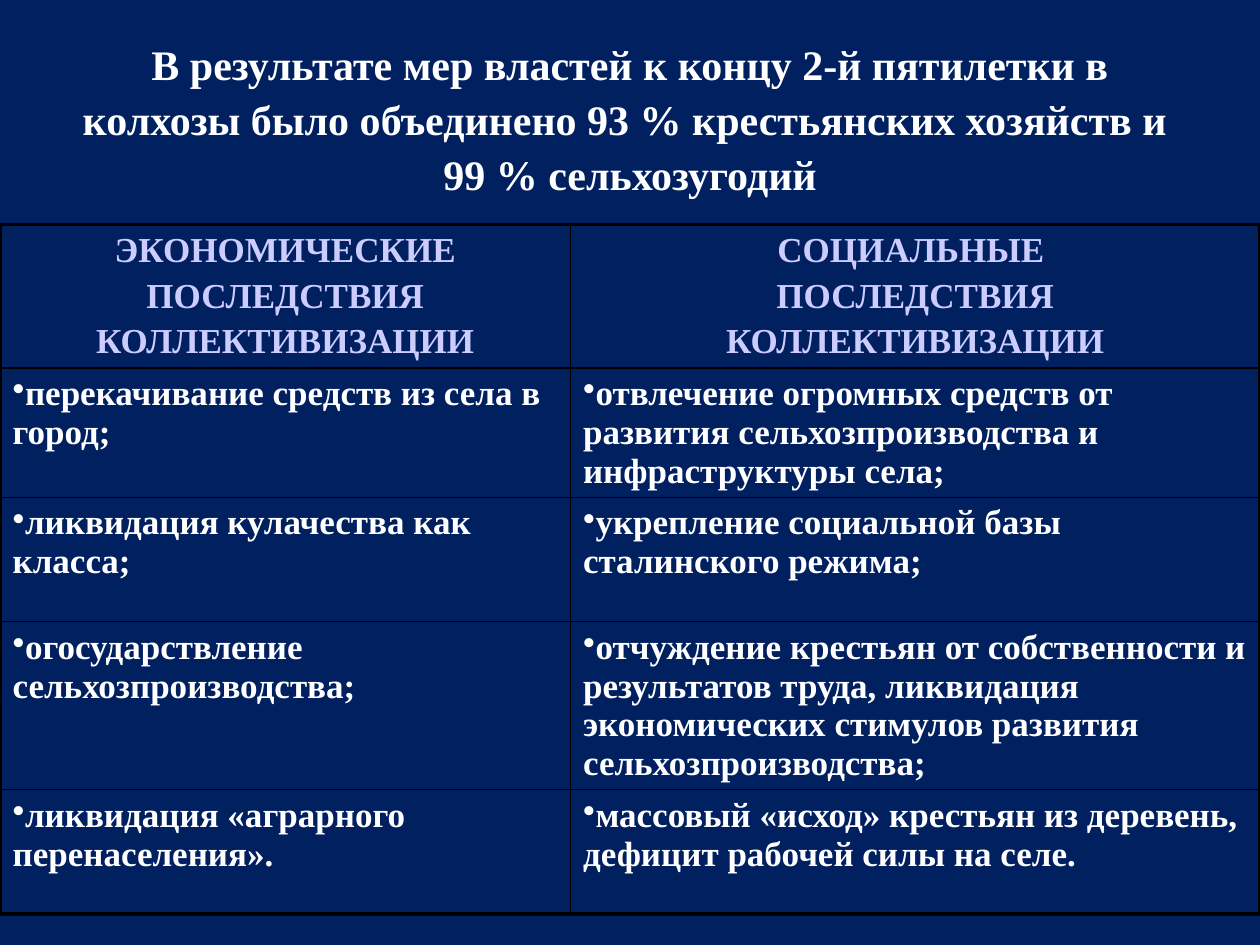
"""Build a slide on the economic and social results of collectivization."""
import lxml.etree
import pptx
import pptx.dml.color
import pptx.enum.text
import pptx.oxml.ns
import pptx.util

Pt = pptx.util.Pt
RGB = pptx.dml.color.RGBColor.from_string
ALIGN = pptx.enum.text.PP_ALIGN
ANCHOR = pptx.enum.text.MSO_ANCHOR
qn = pptx.oxml.ns.qn

COLORS = {"back": "002060", "text": "FFFFFF", "head": "CCCCFF", "line": "000000"}
FONT = "Times New Roman"
THIN, THICK = 1, 2.25

TITLE = (
    "В результате мер властей к концу 2-й пятилетки в колхозы было объединено "
    "93 % крестьянских хозяйств и \v99 % сельхозугодий"
)
HEADS = [
    ["ЭКОНОМИЧЕСКИЕ", "ПОСЛЕДСТВИЯ", "КОЛЛЕКТИВИЗАЦИИ"],
    ["СОЦИАЛЬНЫЕ ", "ПОСЛЕДСТВИЯ", "КОЛЛЕКТИВИЗАЦИИ"],
]
ROWS = [
    ("перекачивание средств из села в город;",
     "отвлечение огромных средств от развития сельхозпроизводства и инфраструктуры села;"),
    ("ликвидация кулачества как класса;",
     "укрепление социальной базы сталинского режима;"),
    ("огосударствление сельхозпроизводства;",
     "отчуждение крестьян от собственности и результатов труда, ликвидация "
     "экономических стимулов развития сельхозпроизводства;"),
    ("ликвидация «аграрного перенаселения».",
     "массовый «исход» крестьян из деревень, дефицит рабочей силы на селе."),
]
COL_WIDTHS = [326, 394]
ROW_HEIGHTS = [81, 74, 71, 96, 71]


def write(tf, lines, size=20, color="text", align=ALIGN.LEFT, bullet=None,
          before=4, spacing=1.0):
    """Write one paragraph per line with the given format."""
    for i, line in enumerate(lines):
        p = tf.paragraphs[0] if i == 0 else tf.add_paragraph()
        p.text = line
        p.alignment = align
        p.line_spacing = spacing
        p.space_before = Pt(before if i else 0)
        if bullet:
            pPr = p._p.get_or_add_pPr()
            pPr.set("marL", "0")
            pPr.set("indent", "0")
            lxml.etree.SubElement(pPr, qn("a:buChar")).set("char", bullet)
        for r in p.runs:
            r.font.name = FONT
            r.font.size = Pt(size)
            r.font.bold = True
            r.font.color.rgb = RGB(COLORS[color])


class Deck:
    """Hold the presentation style and the current slide."""

    def __init__(self):
        """Start a presentation with one title-only slide."""
        self.prs = pptx.Presentation()
        self.prs.slide_width, self.prs.slide_height = Pt(720), Pt(540)
        self.s = self.prs.slides.add_slide(self.prs.slide_layouts[5])
        fill = self.s.background.fill
        fill.solid()
        fill.fore_color.rgb = RGB(COLORS["back"])

    def title(self, text, left, top, width, height):
        """Place and fill the title placeholder."""
        sp = self.s.shapes.title
        sp.left, sp.top, sp.width, sp.height = map(Pt, (left, top, width, height))
        tf = sp.text_frame
        tf.word_wrap = True
        tf.auto_size = pptx.enum.text.MSO_AUTO_SIZE.NONE
        tf.vertical_anchor = ANCHOR.MIDDLE
        write(tf, [text], size=24, align=ALIGN.CENTER, spacing=1.09)

    def borders(self, cell, **widths):
        """Draw the cell's borders with the given widths in points."""
        tcPr = cell._tc.get_or_add_tcPr()
        for i, (side, width) in enumerate(widths.items()):
            ln = lxml.etree.Element(qn(f"a:ln{side}"), w=str(Pt(width)))
            fill = lxml.etree.SubElement(ln, qn("a:solidFill"))
            lxml.etree.SubElement(fill, qn("a:srgbClr"), val=COLORS["line"])
            tcPr.insert(i, ln)

    def table(self, left, top, heads, rows, widths, heights):
        """Add a table with centred heads and bulleted cells."""
        n_rows, n_cols = len(heights), len(widths)
        tbl = self.s.shapes.add_table(
            n_rows, n_cols, Pt(left), Pt(top), Pt(sum(widths)), Pt(sum(heights))
        ).table
        tbl.first_row = tbl.horz_banding = False
        for col, width in zip(tbl.columns, widths):
            col.width = Pt(width)
        for row, height in zip(tbl.rows, heights):
            row.height = Pt(height)
        for i in range(n_rows):
            for j in range(n_cols):
                cell = tbl.cell(i, j)
                cell.fill.background()
                if i == 0:
                    write(cell.text_frame, heads[j], color="head", align=ALIGN.CENTER)
                else:
                    write(cell.text_frame, [rows[i - 1][j]], bullet="•")
                self.borders(
                    cell,
                    L=THICK if j == 0 else THIN,
                    R=THICK if j == n_cols - 1 else THIN,
                    T=THICK if i == 0 else THIN,
                    B=THICK if i == n_rows - 1 else THIN,
                )


def main():
    """Build and save the slide."""
    deck = Deck()
    deck.title(TITLE, 36, 21.6, 648, 90)
    deck.table(0, 128.4, HEADS, ROWS, COL_WIDTHS, ROW_HEIGHTS)
    deck.prs.save("out.pptx")


if __name__ == "__main__":
    main()
